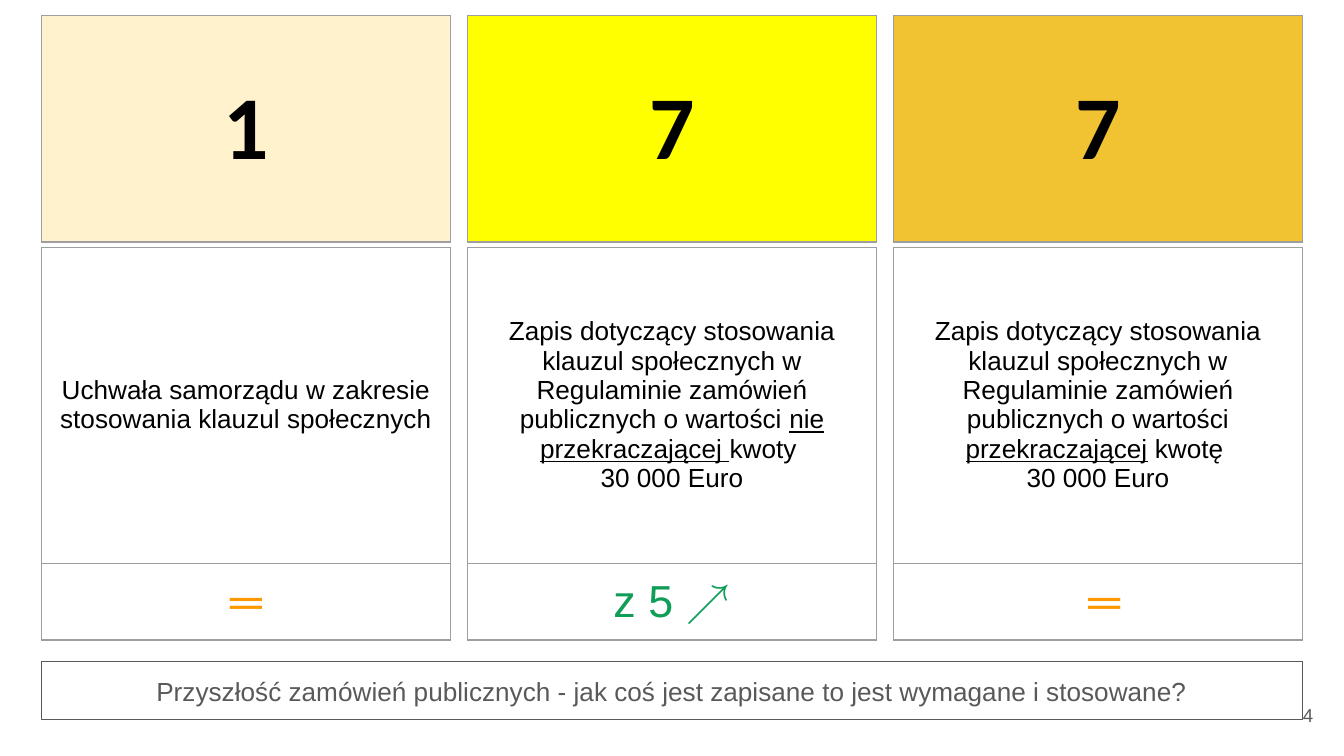
from collections import namedtuple
from dataclasses import dataclass

from lxml import etree
from pptx import Presentation
from pptx import util as u
from pptx.dml.color import RGBColor
from pptx.enum import text
from pptx.oxml.ns import qn

Box = namedtuple("Box", "left top width height")
Span = namedtuple("Span", "text underline", defaults=(False,))
Card = namedtuple("Card", "number fill lines space_after sign color bold")


@dataclass(frozen=True)
class Theme:
    sans: str = "Arial"
    display: str = "Calibri"
    ink: str = "000000"
    muted: str = "595959"
    border: str = "9E9E9E"
    same: str = "FF9900"
    growth: str = "0F9D58"
    number_size: int = 48
    sign_size: int = 24
    body_size: int = 14
    small_size: int = 10
    line: float = 0.75
    inset: float = 0.1


THEME = Theme()
WIDTH = u.Inches(10)
HEIGHT = WIDTH * 9 // 16
MARGIN, GUTTER, COLUMNS = 0.031, 0.013, 3
COLUMN = (1 - 2 * MARGIN - (COLUMNS - 1) * GUTTER) / COLUMNS
NUMBER_TOP, NUMBER_ROW = 0.02, 0.3
DETAIL_TOP, DETAIL_ROW, SIGN_ROW = 0.327, 0.418, 0.096
QUESTION_TOP, QUESTION_ROW = 0.875, 0.077

RULE = "Zapis dotyczący stosowania klauzul społecznych w Regulaminie zamówień publicznych o wartości "
CARDS = [
    Card("1", "FFF2CC",
         [[Span("Uchwała samorządu w zakresie stosowania klauzul społecznych")]],
         0, "═", THEME.same, True),
    Card("7", "FFFF00",
         [[Span(RULE), Span("nie przekraczającej ", True), Span("kwoty ")], [Span("30 000 Euro")]],
         16, "z 5 ↗", THEME.growth, False),
    Card("7", "F1C232",
         [[Span(RULE), Span("przekraczającej", True), Span(" kwotę ")], [Span("30 000 Euro")]],
         0, " ═", THEME.same, True),
]


def area(left, top, width, height):
    return Box(round(left * WIDTH), round(top * HEIGHT), round(width * WIDTH), round(height * HEIGHT))


def format_spans(para, size, color, font=THEME.sans, bold=False, align=text.PP_ALIGN.CENTER):
    para.alignment = align
    for span in para.runs:
        span.font.size = u.Pt(size)
        span.font.name = font
        span.font.bold = bold
        span.font.color.rgb = RGBColor.from_string(color)


def set_insets(item):
    item.margin_left = item.margin_right = u.Inches(THEME.inset)
    item.margin_top = item.margin_bottom = u.Inches(THEME.inset)


def outline_cell(cell):
    properties = cell._tc.get_or_add_tcPr()
    for side in ("a:lnL", "a:lnR", "a:lnT", "a:lnB"):
        line = etree.SubElement(properties, qn(side), w=str(u.Pt(THEME.line)))
        fill = etree.SubElement(line, qn("a:solidFill"))
        etree.SubElement(fill, qn("a:srgbClr"), val=THEME.border)


def add_column_table(page, box, shares):
    table = page.shapes.add_table(len(shares), 1, *box).table
    table.first_row = table.horz_banding = False
    for row, share in zip(table.rows, shares):
        row.height = round(box.height * share / sum(shares))
    for cell in table.iter_cells():
        set_insets(cell)
        outline_cell(cell)
        cell.fill.background()
    return table


def add_number(page, box, card):
    cell = add_column_table(page, box, [1]).cell(0, 0)
    cell.fill.solid()
    cell.fill.fore_color.rgb = RGBColor.from_string(card.fill)
    cell.vertical_anchor = text.MSO_ANCHOR.MIDDLE
    cell.text_frame.text = card.number
    format_spans(cell.text_frame.paragraphs[0], THEME.number_size, THEME.ink, THEME.display, True)


def add_detail(page, box, card):
    table = add_column_table(page, box, [DETAIL_ROW, SIGN_ROW])
    detail, trend = table.iter_cells()
    detail.vertical_anchor = text.MSO_ANCHOR.MIDDLE
    para = detail.text_frame.paragraphs[0]
    para.space_after = u.Pt(card.space_after)
    for index, line in enumerate(card.lines):
        if index:
            para.add_line_break()
        for part in line:
            span = para.add_run()
            span.text = part.text
            span.font.underline = part.underline
    format_spans(para, THEME.body_size, THEME.ink)
    trend.text_frame.text = card.sign
    format_spans(trend.text_frame.paragraphs[0], THEME.sign_size, card.color, bold=card.bold)


def add_question(page, box, wording):
    title = page.shapes.title
    title.left, title.top, title.width, title.height = box
    title.line.color.rgb = RGBColor.from_string(THEME.muted)
    title.line.width = u.Pt(THEME.line)
    frame = title.text_frame
    frame.text = wording
    frame.word_wrap = True
    frame.auto_size = text.MSO_AUTO_SIZE.NONE
    frame.vertical_anchor = text.MSO_ANCHOR.TOP
    set_insets(frame)
    format_spans(frame.paragraphs[0], THEME.body_size, THEME.muted)


def add_page_number(page, box, number):
    frame = page.shapes.add_textbox(*box).text_frame
    frame.text = number
    frame.word_wrap = True
    frame.vertical_anchor = text.MSO_ANCHOR.MIDDLE
    set_insets(frame)
    format_spans(frame.paragraphs[0], THEME.small_size, THEME.muted, align=text.PP_ALIGN.RIGHT)


def main():
    deck = Presentation()
    deck.slide_width, deck.slide_height = WIDTH, HEIGHT
    page = deck.slides.add_slide(deck.slide_layouts.get_by_name("Title Only"))
    lefts = [MARGIN + index * (COLUMN + GUTTER) for index in range(COLUMNS)]
    for left, card in zip(lefts, CARDS):
        add_detail(page, area(left, DETAIL_TOP, COLUMN, DETAIL_ROW + SIGN_ROW), card)
    for left, card in zip(lefts, CARDS):
        add_number(page, area(left, NUMBER_TOP, COLUMN, NUMBER_ROW), card)
    add_page_number(page, area(0.927, 0.907, 0.06, QUESTION_ROW), "4")
    add_question(page, area(MARGIN, QUESTION_TOP, 1 - 2 * MARGIN, QUESTION_ROW),
                 "Przyszłość zamówień publicznych - jak coś jest zapisane to jest wymagane i stosowane?")
    deck.save("out.pptx")


if __name__ == "__main__":
    main()
